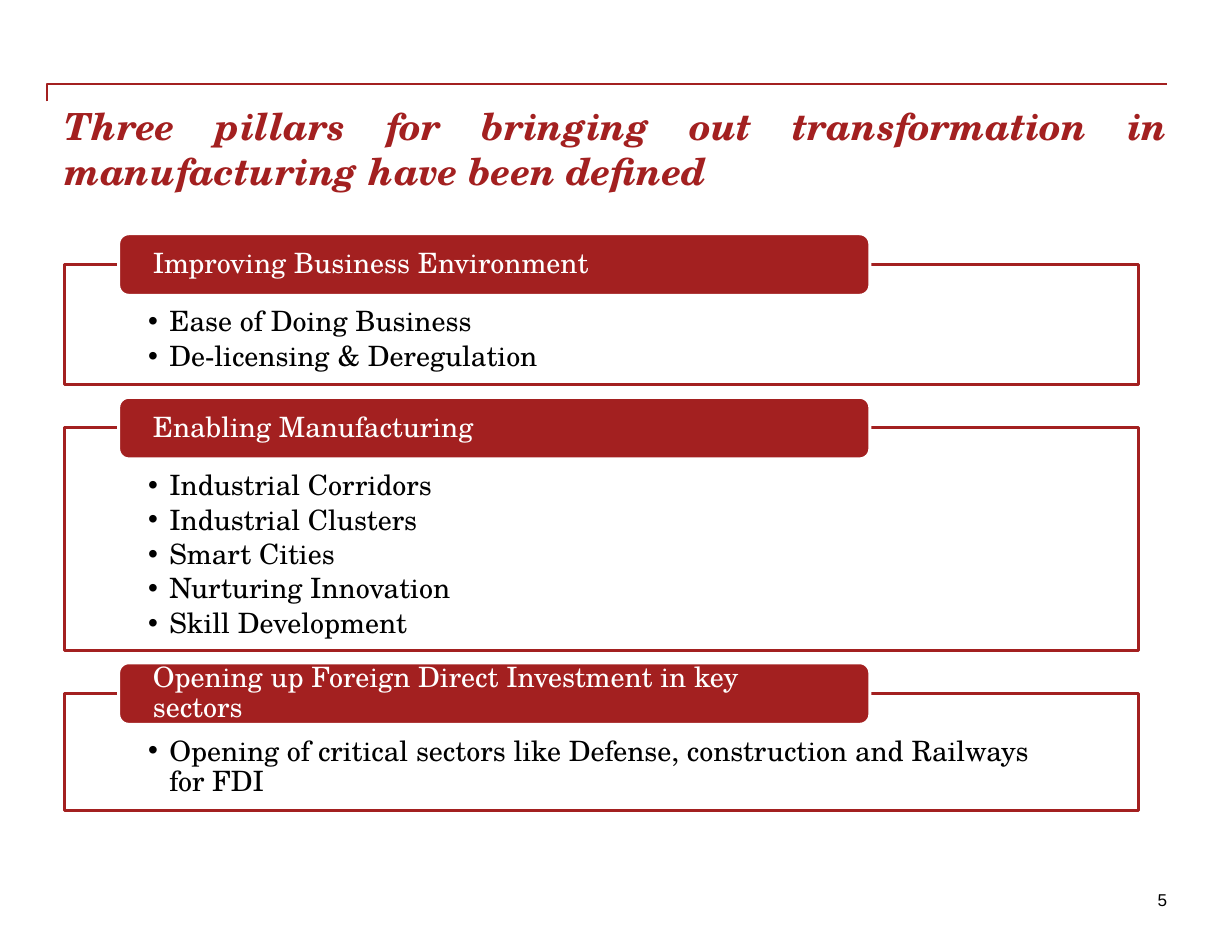
from lxml import etree
from pptx import Presentation
from pptx.dml.color import RGBColor
from pptx.enum.shapes import MSO_CONNECTOR, MSO_SHAPE
from pptx.enum.text import MSO_ANCHOR, MSO_AUTO_SIZE, PP_ALIGN
from pptx.oxml.ns import qn
from pptx.util import Cm, Pt

RED = RGBColor(0xA3, 0x20, 0x20)
WHITE = RGBColor(0xFF, 0xFF, 0xFF)
BLACK = RGBColor(0x00, 0x00, 0x00)
SERIF = "TeX Gyre Schola"
ELBOW = MSO_CONNECTOR.ELBOW
ROUNDED = MSO_SHAPE.ROUNDED_RECTANGLE
TOP, MIDDLE = MSO_ANCHOR.TOP, MSO_ANCHOR.MIDDLE
LEFT, RIGHT, JUSTIFY = PP_ALIGN.LEFT, PP_ALIGN.RIGHT, PP_ALIGN.JUSTIFY
NO_AUTOFIT = MSO_AUTO_SIZE.NONE
COMPARISON_LAYOUT = 4

TITLE_FONT = {"name": SERIF, "size": Pt(24), "bold": True, "italic": True}
PILLAR_FONT = {"name": SERIF, "size": Pt(18), "bold": False}
NUMBER_FONT = {"name": "Arial", "size": Pt(11)}

# Lengths in centimetres
PANEL_LEFT, PANEL_TOP, PANEL_WIDTH, PANEL_GAP = 1.47, 5.99, 24.36, 0.97
HEADER_INDENT, HEADER_RISE, HEADER_WIDTH, HEADER_HEIGHT = 1.22, 0.69, 17.04, 1.4
BULLET_INDENT = 0.48

# Heading, panel height, points
PILLARS = [
    ("Improving Business Environment", 2.74,
     ["Ease of Doing Business", "De-licensing & Deregulation"]),
    ("Enabling Manufacturing", 5.05,
     ["Industrial Corridors", "Industrial Clusters", "Smart Cities",
      "Nurturing Innovation", "Skill Development"]),
    ("Opening up Foreign Direct Investment in key sectors", 2.67,
     ["Opening of critical sectors like Defense, construction and Railways for FDI"]),
]


def place(shape, box):
    shape.left, shape.top, shape.width, shape.height = (Cm(value) for value in box)


def format_frame(shape, anchor, margins=(0, 0, 0, 0), wrap=True):
    frame = shape.text_frame
    values = {"auto_size": NO_AUTOFIT, "word_wrap": wrap, "vertical_anchor": anchor}
    sides = ("margin_left", "margin_top", "margin_right", "margin_bottom")
    values.update(zip(sides, map(Cm, margins)))
    for name, value in values.items():
        setattr(frame, name, value)
    return frame


def write(paragraph, text, font, color, **layout):
    run = paragraph.add_run()
    run.text = text
    for name, value in font.items():
        setattr(run.font, name, value)
    run.font.color.rgb = color
    for name, value in layout.items():
        setattr(paragraph, name, value)


def add_bullet(paragraph):
    properties = paragraph._p.get_or_add_pPr()
    properties.set("marL", str(Cm(BULLET_INDENT)))
    properties.set("indent", str(-Cm(BULLET_INDENT)))
    etree.SubElement(properties, qn("a:buChar"), char="•")


def add_title(slide, box):
    # Rule with a short drop at its left end
    left, top, width, drop = 1.07, 1.9, 25.4, 0.4
    rule = slide.shapes.add_connector(
        ELBOW, Cm(left), Cm(top + drop), Cm(left + width), Cm(top))
    rule.line.color.rgb = RED
    rule.line.width = Pt(1)
    properties = rule._element.spPr
    guides = properties.find(qn("a:prstGeom")).get_or_add_avLst()
    etree.SubElement(guides, qn("a:gd"), name="adj1", fmla="val 0")
    etree.SubElement(properties, qn("a:effectLst"))

    # Heading
    title = slide.shapes.title
    place(title, box)
    frame = format_frame(title, TOP)
    write(frame.paragraphs[0],
          "Three pillars for bringing out transformation in manufacturing have been defined",
          TITLE_FONT, RED, alignment=JUSTIFY)


def add_pillar(slide, panel, box, heading, points):
    left, top = box[:2]

    # Outlined panel with its list
    place(panel, box)
    panel.fill.solid()
    panel.fill.fore_color.rgb = WHITE
    panel.line.color.rgb = RED
    panel.line.width = Pt(2)
    frame = format_frame(panel, TOP, (1.89, 0.99, 1.89, 0.36))
    for index, point in enumerate(points):
        paragraph = frame.add_paragraph() if index else frame.paragraphs[0]
        write(paragraph, point, PILLAR_FONT, BLACK, level=1, alignment=LEFT,
              line_spacing=0.9, space_before=Pt(0), space_after=Pt(2.7))
        add_bullet(paragraph)

    # Header across the panel's top edge
    header = slide.shapes.add_shape(
        ROUNDED, Cm(left + HEADER_INDENT), Cm(top - HEADER_RISE),
        Cm(HEADER_WIDTH), Cm(HEADER_HEIGHT))
    header.shadow.inherit = False
    header.fill.solid()
    header.fill.fore_color.rgb = RED
    header.line.color.rgb = WHITE
    header.line.width = Pt(2)
    frame = format_frame(header, MIDDLE, (0.71, 0, 0.71, 0))
    write(frame.paragraphs[0], heading, PILLAR_FONT, WHITE,
          alignment=LEFT, line_spacing=0.9)


def add_page_number(slide, box):
    number = slide.shapes.add_textbox(*(Cm(value) for value in box))
    frame = format_frame(number, TOP, wrap=False)
    write(frame.paragraphs[0], "5", NUMBER_FONT, BLACK, alignment=RIGHT)


def main():
    presentation = Presentation()
    presentation.slide_width, presentation.slide_height = Cm(27.94), Cm(21.59)
    slide = presentation.slides.add_slide(presentation.slide_layouts[COMPARISON_LAYOUT])
    _, *panels = slide.placeholders

    add_title(slide, (1.47, 2.34, 25, 1.9))
    top = PANEL_TOP
    for panel, (heading, height, points) in zip(panels, PILLARS):
        add_pillar(slide, panel, (PANEL_LEFT, top, PANEL_WIDTH, height), heading, points)
        top += height + PANEL_GAP
    add_page_number(slide, (26.24, 20.17, 0.23, 0.48))

    # Unused placeholders
    for panel in panels[len(PILLARS):]:
        panel._element.getparent().remove(panel._element)
    presentation.save("out.pptx")


if __name__ == "__main__":
    main()
